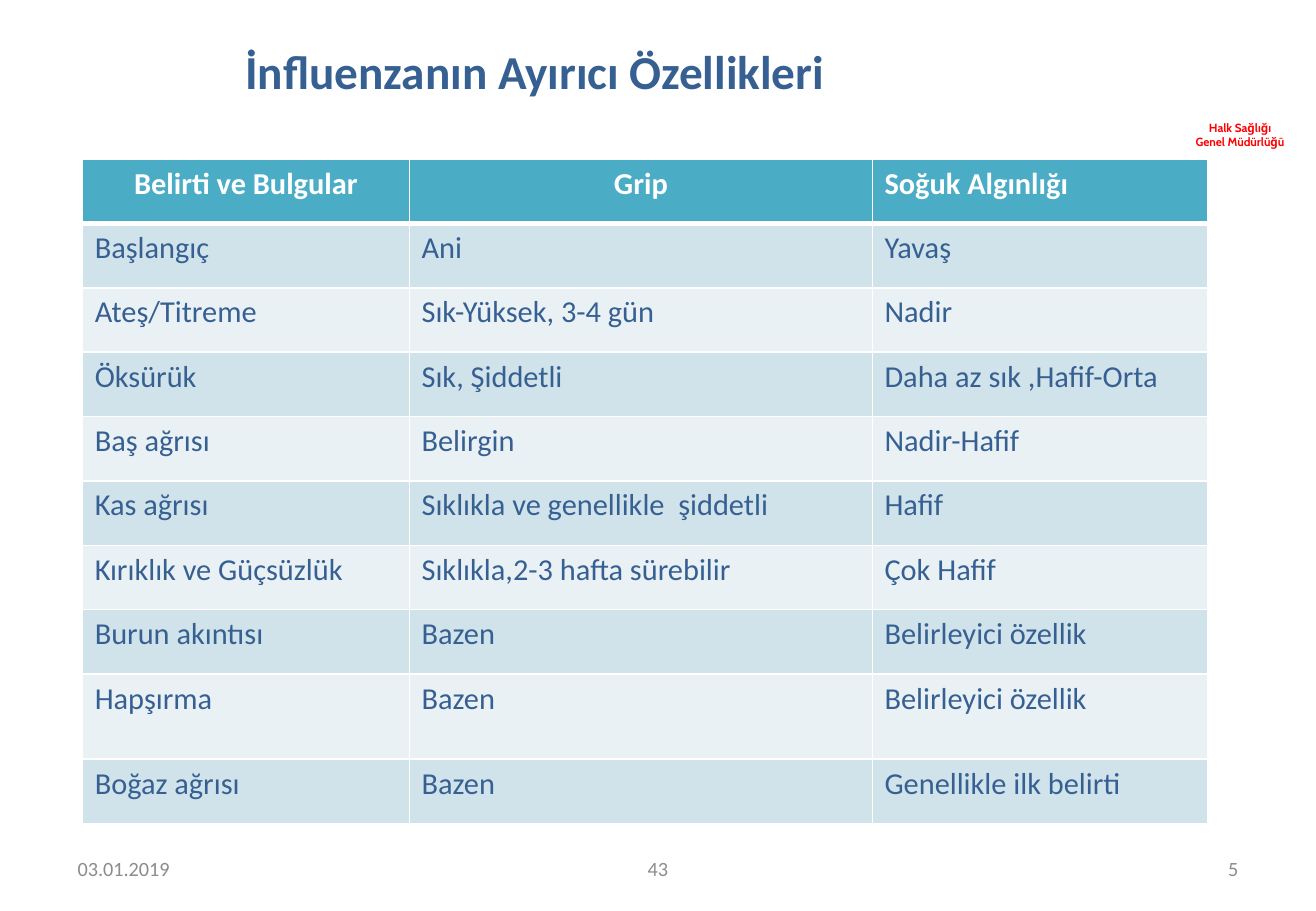
from dataclasses import dataclass

from lxml import etree
from pptx import Presentation
from pptx.dml.color import RGBColor
from pptx.enum.text import MSO_ANCHOR, PP_ALIGN
from pptx.oxml.ns import qn
from pptx.util import Pt

PX = 9144
LEFT, CENTER, RIGHT = PP_ALIGN.LEFT, PP_ALIGN.CENTER, PP_ALIGN.RIGHT
TOP, MIDDLE = MSO_ANCHOR.TOP, MSO_ANCHOR.MIDDLE
TITLE_ONLY = 5


@dataclass(frozen=True)
class Theme:
    font: str = "Calibri"
    label_font: str = "Cabin"
    white: str = "FFFFFF"
    text: str = "376092"
    header: str = "4BACC6"
    bands: tuple = ("D0E3EA", "E9F1F5")
    label: str = "FF0000"
    footer: str = "8C8C8C"
    title_size: int = 28
    table_size: int = 18
    footer_size: int = 12
    label_size: int = 7


THEME = Theme()

HEADER = ("Belirti ve Bulgular", "Grip", "Soğuk Algınlığı")
HEADER_ALIGNS = (CENTER, CENTER, LEFT)
SYMPTOMS = (
    ("Başlangıç", "Ani", "Yavaş"),
    ("Ateş/Titreme", "Sık-Yüksek, 3-4 gün", "Nadir"),
    ("Öksürük", "Sık, Şiddetli", "Daha az sık ,Hafif-Orta"),
    ("Baş ağrısı", "Belirgin", "Nadir-Hafif"),
    ("Kas ağrısı", "Sıklıkla ve genellikle  şiddetli", "Hafif"),
    ("Kırıklık ve Güçsüzlük", "Sıklıkla,2-3 hafta sürebilir", "Çok Hafif"),
    ("Burun akıntısı", "Bazen", "Belirleyici özellik"),
    ("Hapşırma", "Bazen", "Belirleyici özellik"),
    ("Boğaz ağrısı", "Bazen", "Genellikle ilk belirti"),
)
COLUMN_WIDTHS = (269, 381, 276)
ROW_HEIGHT, TALL_ROW_HEIGHT, TALL_ROW = 53, 70, 8


def emu(box):
    return [length * PX for length in box]


def color(value):
    return RGBColor.from_string(value)


def write(frame, lines, size, text_color, align=LEFT, bold=False, font=THEME.font):
    for index, line in enumerate(lines):
        paragraph = frame.add_paragraph() if index else frame.paragraphs[0]
        paragraph.alignment = align
        run = paragraph.add_run()
        run.text = line
        run.font.name = font
        run.font.size = Pt(size)
        run.font.bold = bold
        run.font.color.rgb = color(text_color)


def add_title(slide, box, text):
    title = slide.shapes.title
    title.left, title.top, title.width, title.height = emu(box)
    title.text_frame.vertical_anchor = TOP
    write(title.text_frame, [text], THEME.title_size, THEME.text, bold=True)


def add_institution_label(slide, box, lines):
    label = slide.shapes.add_textbox(*emu(box))
    label.fill.solid()
    label.fill.fore_color.rgb = color(THEME.white)
    frame = label.text_frame
    frame.word_wrap = True
    frame.margin_left = frame.margin_right = frame.margin_top = frame.margin_bottom = 0
    write(frame, lines, THEME.label_size, THEME.label, CENTER, True, THEME.label_font)


def add_borders(cell, top_width, bottom_width):
    properties = cell._tc.get_or_add_tcPr()
    widths = {"a:lnL": 1, "a:lnR": 1, "a:lnT": top_width, "a:lnB": bottom_width}
    for tag, width in widths.items():
        line = etree.SubElement(properties, qn(tag), w=str(Pt(width)))
        fill = etree.SubElement(line, qn("a:solidFill"))
        etree.SubElement(fill, qn("a:srgbClr"), val=THEME.white)


def add_symptom_table(slide, box):
    rows = (HEADER, *SYMPTOMS)
    table = slide.shapes.add_table(len(rows), len(HEADER), *emu(box)).table
    table.first_row = table.horz_banding = False
    for column, width in zip(table.columns, COLUMN_WIDTHS):
        column.width = width * PX
    for row_index, texts in enumerate(rows):
        is_header = row_index == 0
        height = TALL_ROW_HEIGHT if row_index == TALL_ROW else ROW_HEIGHT
        table.rows[row_index].height = height * PX
        background = THEME.header if is_header else THEME.bands[(row_index - 1) % 2]
        text_color = THEME.white if is_header else THEME.text
        for column_index, text in enumerate(texts):
            cell = table.cell(row_index, column_index)
            add_borders(cell, 3 if row_index == 1 else 1, 3 if is_header else 1)
            cell.fill.solid()
            cell.fill.fore_color.rgb = color(background)
            align = HEADER_ALIGNS[column_index] if is_header else LEFT
            write(cell.text_frame, [text], THEME.table_size, text_color, align, is_header)


def add_footer(slide, box, date, total, number):
    left, top, width, height = box
    side, middle = 253, 343
    parts = (
        (left, side, date, LEFT),
        (left + (width - middle) // 2, middle, total, CENTER),
        (left + width - side, side, number, RIGHT),
    )
    for part_left, part_width, text, align in parts:
        part = slide.shapes.add_textbox(*emu((part_left, top, part_width, height)))
        part.text_frame.word_wrap = True
        part.text_frame.vertical_anchor = MIDDLE
        write(part.text_frame, [text], THEME.footer_size, THEME.footer, align)


def main():
    presentation = Presentation()
    presentation.slide_width, presentation.slide_height = emu((1083, 750))
    slide = presentation.slides.add_slide(presentation.slide_layouts[TITLE_ONLY])
    add_institution_label(slide, (964, 99, 113, 24), ("Halk Sağlığı", "Genel Müdürlüğü"))
    add_symptom_table(slide, (68, 131, 926, 547))
    add_footer(slide, (54, 695, 975, 40), "03.01.2019", "43", "5")
    add_title(slide, (192, 30, 793, 58), "İnfluenzanın Ayırıcı Özellikleri")
    presentation.save("out.pptx")


if __name__ == "__main__":
    main()
